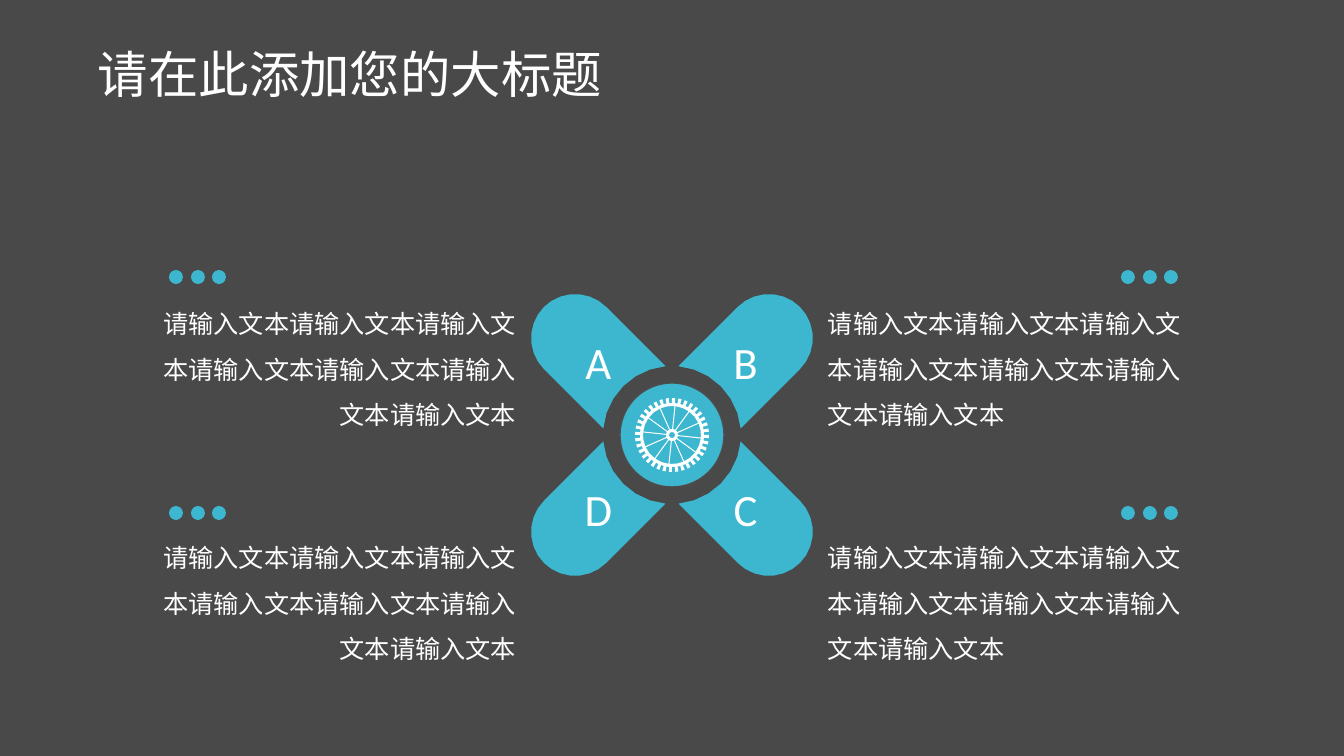
from math import asin, cos, pi, radians, sin

from lxml.etree import SubElement
from pptx import Presentation
from pptx.dml.color import RGBColor
from pptx.enum.shapes import MSO_SHAPE as Shape
from pptx.enum.text import MSO_ANCHOR as Anchor, PP_ALIGN as Align
from pptx.oxml.ns import qn
from pptx.util import Pt

# Content
TITLE = "请在此添加您的大标题"
BODY = "请输入文本请输入文本请输入文本请输入文本请输入文本请输入文本请输入文本"
PETALS = [("A", 225), ("B", 315), ("C", 45), ("D", 135)]  # letter, direction in degrees
COLUMNS = [(146, 176, Align.RIGHT), (818, 1128, Align.LEFT)]  # text left, first dot, alignment
ROWS = [(293, 277), (527, 513)]  # text top, dot centre

# Format
BACKGROUND, TEAL, EDGE, WHITE, ICON = "494949", "3DB7CF", "4D4D4D", "FFFFFF", "FEFFFF"
CHINESE, LATIN = "Noto Sans CJK SC", "Calibri"

# Geometry in px
PX = 914400 / 100.8
SLIDE_WIDTH, SLIDE_HEIGHT = 1344, 756
TITLE_BOX = (88, 30, 1103, 94)
BODY_WIDTH, BODY_HEIGHT = 380, 137
CENTER = (672, 435)
HUB_RADIUS = 52
RING_RADIUS, PETAL_RADIUS, PETAL_REACH = 69, 44, 137
DOT_RADIUS, DOT_STEPS = 7, (0, 22, 43)
TEETH, TOOTH_RADIUS, ROOT_RADIUS = 36, 37, 32
SPOKES, SPOKE_START, SPOKE_WIDTH = 12, 6, 1
RIM_RADIUS, NAVE_RADIUS, AXLE_RADIUS = 29, 6, 3


def emu(length):
    return round(length * PX)


def color(value):
    return RGBColor.from_string(value)


def arc(center, radius, start, end, steps=1):
    angles = [start + (end - start) * step / steps for step in range(steps + 1)]
    return [(center[0] + radius * cos(a), center[1] + radius * sin(a)) for a in angles]


def circle(center, radius):
    return arc(center, radius, 0, 2 * pi, 12)[:-1]


def add_outline(slide, contours, fill):
    """Draw closed contours as one shape; inner contours become holes."""
    contours = [[(emu(x), emu(y)) for x, y in contour] for contour in contours]
    builder = slide.shapes.build_freeform(*contours[0][0], scale=1.0)
    for index, contour in enumerate(contours):
        if index:
            builder.move_to(*contour[0])
        builder.add_line_segments(contour[1:], close=True)
    shape = builder.convert_to_shape()
    shape.shadow.inherit = False
    shape.fill.solid()
    shape.fill.fore_color.rgb = color(fill)
    shape.line.fill.background()
    return shape


def write(shape, text, size, font, fill, alignment, spacing=1.0):
    frame = shape.text_frame
    frame.word_wrap = True
    frame.vertical_anchor = Anchor.MIDDLE
    paragraph = frame.paragraphs[0]
    for name, value in {"alignment": alignment, "line_spacing": spacing}.items():
        setattr(paragraph, name, value)
    run = paragraph.add_run()
    run.text = text
    for name, value in {"size": Pt(size), "name": font}.items():
        setattr(run.font, name, value)
    run.font.color.rgb = color(fill)
    SubElement(run.font._element, qn("a:ea")).set("typeface", font)


def add_text(slide, box, *style):
    write(slide.shapes.add_textbox(*map(emu, box)), *style)


def petal(direction):
    """A rounded bar from the ring around the hub outwards."""
    angle = radians(direction)
    tip = arc(CENTER, PETAL_REACH, angle, angle)[0]
    spread = asin(PETAL_RADIUS / RING_RADIUS)
    return (arc(tip, PETAL_RADIUS, angle - pi / 2, angle + pi / 2, 14)
            + arc(CENTER, RING_RADIUS, angle + spread, angle - spread, 6))


def wheel():
    """A toothed rim, the gaps between the spokes, and the axle hole."""
    rim = []
    pitch = 2 * pi / TEETH
    for tooth in range(TEETH):
        start = tooth * pitch
        rim += arc(CENTER, TOOTH_RADIUS, start, start + pitch / 2)
        rim += arc(CENTER, ROOT_RADIUS, start + pitch / 2, start + pitch)
    contours = [rim]
    outer, inner = (SPOKE_WIDTH / 2 / radius for radius in (RIM_RADIUS, NAVE_RADIUS))
    for spoke in range(SPOKES):
        start = radians(SPOKE_START) + spoke * 2 * pi / SPOKES
        end = start + 2 * pi / SPOKES
        contours.append(arc(CENTER, RIM_RADIUS, start + outer, end - outer, 2)
                        + arc(CENTER, NAVE_RADIUS, end - inner, start + inner))
    return contours + [circle(CENTER, AXLE_RADIUS)]


def main():
    presentation = Presentation()
    presentation.slide_width = emu(SLIDE_WIDTH)
    presentation.slide_height = emu(SLIDE_HEIGHT)
    slide = presentation.slides.add_slide(presentation.slide_layouts[6])
    slide.background.fill.solid()
    slide.background.fill.fore_color.rgb = color(BACKGROUND)

    # Title
    add_text(slide, TITLE_BOX, TITLE, 36, CHINESE, WHITE, Align.LEFT, 0.9)

    # Lettered petals
    for letter, direction in PETALS:
        shape = add_outline(slide, [petal(direction)], TEAL)
        write(shape, letter, 32, LATIN, ICON, Align.CENTER)

    # Hub with wheel
    corner = [value - HUB_RADIUS for value in CENTER]
    box = (*corner, 2 * HUB_RADIUS, 2 * HUB_RADIUS)
    hub = slide.shapes.add_shape(Shape.OVAL, *map(emu, box))
    hub.shadow.inherit = False
    hub.fill.solid()
    hub.fill.fore_color.rgb = color(TEAL)
    hub.line.color.rgb = color(EDGE)
    hub.line.width = Pt(1)
    add_outline(slide, wheel(), ICON)

    # Four texts, each under three dots
    for left, first_dot, alignment in COLUMNS:
        for top, dot_y in ROWS:
            add_text(slide, (left, top, BODY_WIDTH, BODY_HEIGHT),
                     BODY, 18, CHINESE, WHITE, alignment, 1.5)
            dots = [circle((first_dot + step, dot_y), DOT_RADIUS) for step in DOT_STEPS]
            add_outline(slide, dots, TEAL)

    presentation.save("out.pptx")


if __name__ == "__main__":
    main()
